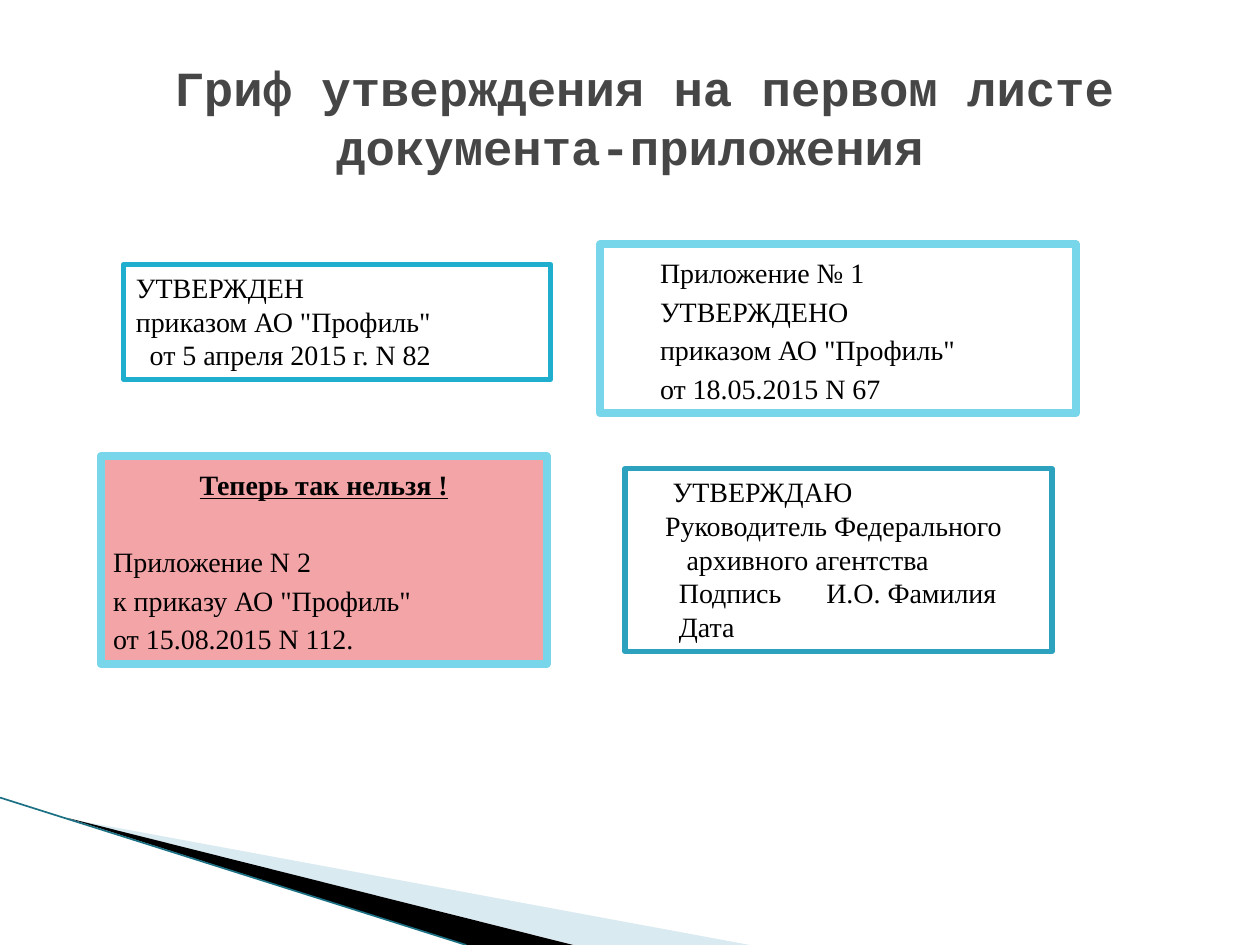
from lxml.etree import SubElement
from pptx import Presentation
from pptx.dml.color import RGBColor
from pptx.enum.shapes import MSO_CONNECTOR, MSO_SHAPE
from pptx.enum.text import MSO_ANCHOR, MSO_AUTO_SIZE, PP_ALIGN
from pptx.oxml.ns import qn
from pptx.util import Inches, Pt


def color(value):
    return RGBColor.from_string(value)


def set_first_line_indent(paragraph, indent):
    properties = paragraph._p.get_or_add_pPr()
    properties.set("marL", "0")
    properties.set("indent", str(Inches(indent)))


def add_tab_stop(paragraph, position):
    tabs = SubElement(paragraph._p.get_or_add_pPr(), qn("a:tabLst"))
    SubElement(tabs, qn("a:tab"), pos=str(Inches(position)), algn="l")


def place_title(slide, box, text):
    title = slide.shapes.title
    title.left, title.top, title.width, title.height = map(Inches, box)
    frame = title.text_frame
    frame.text = text
    frame.word_wrap = True
    frame.auto_size = MSO_AUTO_SIZE.NONE
    frame.vertical_anchor = MSO_ANCHOR.MIDDLE
    paragraph = frame.paragraphs[0]
    set_first_line_indent(paragraph, 0.23)
    paragraph.alignment = PP_ALIGN.CENTER
    font = paragraph.font
    font.name, font.size, font.bold = "Courier New", Pt(28), True
    font.color.rgb = color("464646")


def add_wedge(slide, box, points, fill, alpha=None):
    left, top = box[:2]
    corners = [(Inches(left + x), Inches(top + y)) for x, y in points]
    builder = slide.shapes.build_freeform(*corners[0], scale=1.0)
    builder.add_line_segments(corners[1:], close=True)
    wedge = builder.convert_to_shape()
    wedge.shadow.inherit = False
    wedge.fill.solid()
    wedge.fill.fore_color.rgb = color(fill)
    wedge.line.fill.background()
    if alpha is not None:
        fill_color = wedge._element.spPr.find(".//" + qn("a:srgbClr"))
        SubElement(fill_color, qn("a:alpha"), val=str(alpha * 1000))


def add_corner_decoration(slide, box):
    left, top, width, height = box
    add_wedge(slide, box, [(0.55, 0.17), (width, height), (4.56, height)], "A0CBDC", 40)
    add_wedge(slide, box, [(0.53, 0.16), (4.55, height), (3.7, height)], "000000")
    edge = slide.shapes.add_connector(
        MSO_CONNECTOR.STRAIGHT,
        Inches(left), Inches(top), Inches(left + 3.7), Inches(top + height),
    )
    edge.line.color.rgb = color("1B7083")
    edge.line.width = Pt(0.95)
    SubElement(edge._element.spPr, qn("a:effectLst"))


def add_stamp(slide, box, lines, border, border_width, fill=None,
              indents=None, spacing=1.0, tab=None):
    stamp = slide.shapes.add_shape(MSO_SHAPE.RECTANGLE, *map(Inches, box))
    stamp.shadow.inherit = False
    if fill:
        stamp.fill.solid()
        stamp.fill.fore_color.rgb = color(fill)
    else:
        stamp.fill.background()
    stamp.line.color.rgb = color(border)
    stamp.line.width = Pt(border_width)
    frame = stamp.text_frame
    frame.text = "\n".join(lines)
    frame.word_wrap = True
    frame.auto_size = MSO_AUTO_SIZE.SHAPE_TO_FIT_TEXT
    frame.vertical_anchor = MSO_ANCHOR.TOP
    for paragraph, indent in zip(frame.paragraphs, indents or [0] * len(lines)):
        set_first_line_indent(paragraph, indent)
        paragraph.alignment = PP_ALIGN.LEFT
        paragraph.line_spacing = spacing
        if tab and "\t" in paragraph.text:
            add_tab_stop(paragraph, tab)
        paragraph.font.name = "Times New Roman"
        paragraph.font.size = Pt(16)
        paragraph.font.color.rgb = color("000000")
    return stamp


def add_forbidden_stamp(slide, box):
    stamp = add_stamp(
        slide, box,
        ["Теперь так нельзя !", "Приложение N 2",
         'к приказу АО "Профиль"', "от 15.08.2015 N 112."],
        "78D6EA", 4.5, fill="F2A4A7", spacing=1.15,
    )
    heading, first_line = stamp.text_frame.paragraphs[:2]
    heading.alignment = PP_ALIGN.CENTER
    heading.font.bold = heading.font.underline = True
    first_line.space_before = Pt(22)


def main():
    presentation = Presentation()
    presentation.slide_width, presentation.slide_height = Inches(10), Inches(7.5)
    slide = presentation.slides.add_slide(presentation.slide_layouts[5])

    add_corner_decoration(slide, (0, 6.33, 5.95, 1.17))
    place_title(slide, (0.5, 0.3, 9, 1.25),
                "Гриф утверждения на первом листе документа-приложения")
    add_forbidden_stamp(slide, (0.8, 3.62, 3.54, 1.65))
    add_stamp(
        slide, (4.76, 1.94, 3.78, 1.34),
        ["Приложение № 1", "УТВЕРЖДЕНО", 'приказом АО "Профиль"', "от 18.05.2015 N 67"],
        "78D6EA", 4.5, indents=[0.38] * 4, spacing=1.15,
    )
    add_stamp(
        slide, (4.96, 3.72, 3.39, 1.45),
        ["УТВЕРЖДАЮ", "Руководитель Федерального", "архивного агентства",
         "Подпись\tИ.О. Фамилия", "Дата"],
        "2DA2BF", 3, indents=[0.28, 0.22, 0.39, 0.33, 0.33], tab=1.42,
    )
    add_stamp(
        slide, (0.98, 2.1, 3.39, 0.91),
        ["УТВЕРЖДЕН", 'приказом АО "Профиль"', "от 5 апреля 2015 г. N 82"],
        "1FAECD", 3, indents=[0, 0, 0.11],
    )
    presentation.save("out.pptx")


if __name__ == "__main__":
    main()
